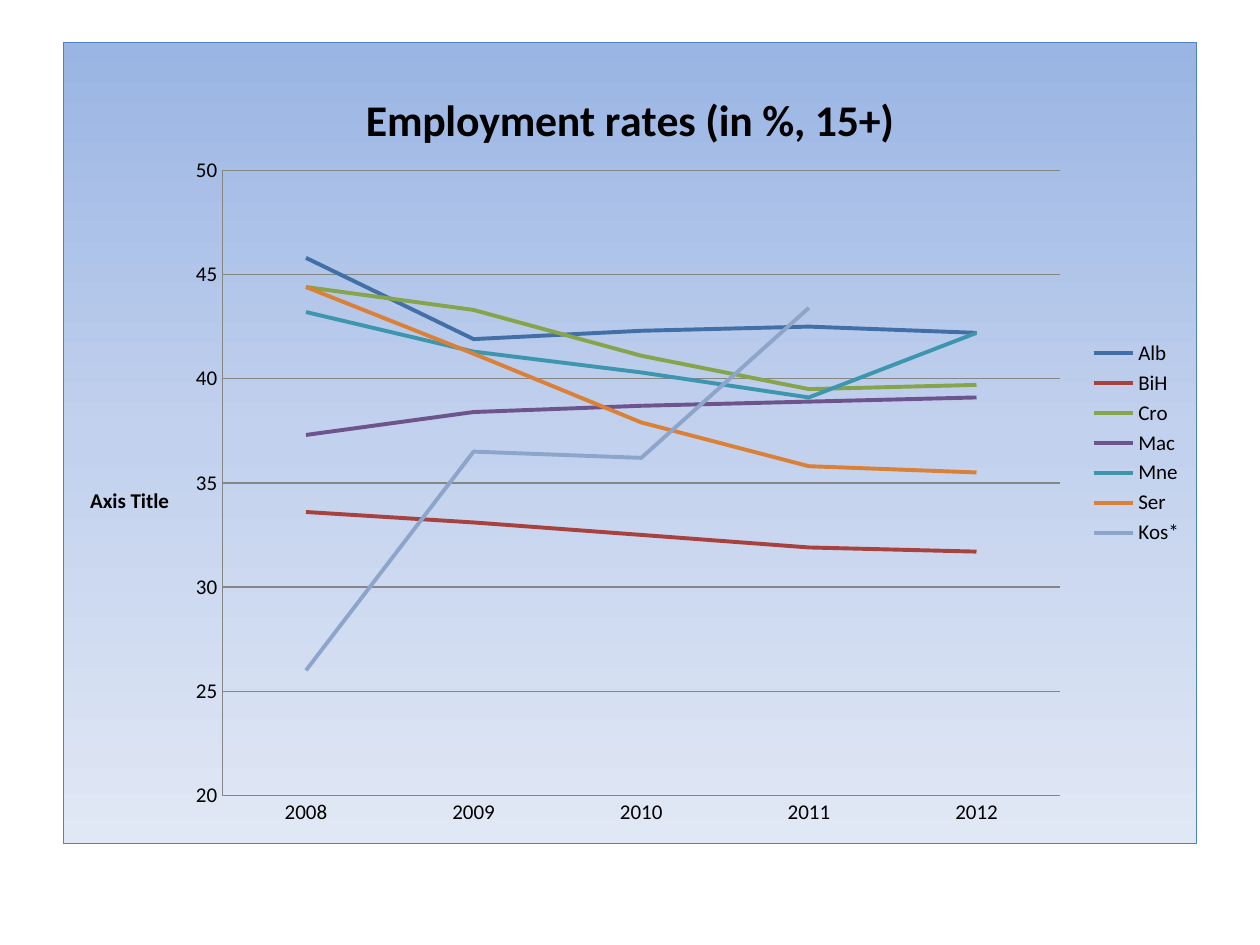
from lxml import etree
from pptx import Presentation
from pptx.chart.data import CategoryChartData
from pptx.dml.color import RGBColor
from pptx.enum.chart import XL_CHART_TYPE as ChartType, XL_LEGEND_POSITION as LegendPos, XL_TICK_MARK as Tick
from pptx.oxml import parse_xml
from pptx.oxml.ns import nsdecls, qn
from pptx.util import Inches, Pt

YEARS = ["2008", "2009", "2010", "2011", "2012"]
RATES = [
    ("Alb", "416FA6", [45.8, 41.9, 42.3, 42.5, 42.2]),
    ("BiH", "A8423F", [33.6, 33.1, 32.5, 31.9, 31.7]),
    ("Cro", "86A44A", [44.4, 43.3, 41.1, 39.5, 39.7]),
    ("Mac", "6E548D", [37.3, 38.4, 38.7, 38.9, 39.1]),
    ("Mne", "3D96AE", [43.2, 41.3, 40.3, 39.1, 42.2]),
    ("Ser", "DA8137", [44.4, 41.2, 37.9, 35.8, 35.5]),
    ("Kos*", "8EA5CB", [26, 36.5, 36.2, 43.4, None]),
]
GRADIENT = [(0, "9AB5E4"), (50, "C2D1ED"), (100, "E1E8F5")]


def rgb(color):
    """Return the colour for a hex string."""
    return RGBColor.from_string(color)


def set_font(font, size=12, bold=False, color="000000", name="Calibri"):
    """Format a font."""
    font.size, font.bold, font.name = Pt(size), bold, name
    font.color.rgb = rgb(color)


def set_text(tf, text, **fmt):
    """Write one formatted run into a text frame."""
    r = tf.paragraphs[0].add_run()
    r.text = text
    set_font(r.font, **fmt)


def set_line(line, color, width=0.75):
    """Format an outline or a series line."""
    line.color.rgb = rgb(color)
    line.width = Pt(width)


def set_layout(element, inner=False, **fractions):
    """Place a chart part by fractions of the chart's size."""
    for old in element.findall(qn("c:layout")):
        element.remove(old)
    layout = etree.Element(qn("c:layout"))
    manual = etree.SubElement(layout, qn("c:manualLayout"))
    if inner:
        etree.SubElement(manual, qn("c:layoutTarget"), val="inner")
    for key in "xy":
        etree.SubElement(manual, qn(f"c:{key}Mode"), val="edge")
    for key, value in fractions.items():
        etree.SubElement(manual, qn(f"c:{key}"), val=str(value))
    tx = element.find(qn("c:tx"))
    element.insert(0 if tx is None else element.index(tx) + 1, layout)


def set_background(chart, stops, border):
    """Give the chart area a vertical gradient and a border."""
    gs = "".join(f'<a:gs pos="{pos * 1000}"><a:srgbClr val="{color}"/></a:gs>' for pos, color in stops)
    sp_pr = parse_xml(
        f'<c:spPr {nsdecls("c", "a")}><a:gradFill><a:gsLst>{gs}</a:gsLst>'
        f'<a:lin ang="5400000" scaled="0"/></a:gradFill><a:ln w="{Pt(0.75)}">'
        f'<a:solidFill><a:srgbClr val="{border}"/></a:solidFill></a:ln></c:spPr>'
    )
    chart.element.find(qn("c:chart")).addnext(sp_pr)


def format_axes(chart):
    """Set scale, lines and title of the axes."""
    for axis in (chart.category_axis, chart.value_axis):
        axis.major_tick_mark = axis.minor_tick_mark = Tick.NONE
        set_font(axis.tick_labels.font)
        set_line(axis.format.line, "868686")
    axis = chart.value_axis
    axis.minimum_scale, axis.maximum_scale, axis.major_unit = 20, 50, 5
    axis.has_major_gridlines = True
    set_line(axis.major_gridlines.format.line, "868686")
    axis.tick_labels.number_format = "#,##0"
    axis.tick_labels.number_format_is_linked = False
    title = axis.axis_title
    set_text(title.text_frame, "Axis Title", bold=True)
    body = title.element.find(".//" + qn("a:bodyPr"))
    body.set("rot", "0")
    body.set("vert", "horz")
    set_layout(title.element, x=0.02, y=0.55)


def add_rates_chart(slide):
    """Add the line chart of employment rates."""
    data = CategoryChartData(number_format="General")
    data.categories = YEARS
    for name, _, values in RATES:
        data.add_series(name, values)
    chart = slide.shapes.add_chart(
        ChartType.LINE, Inches(0.5), Inches(0.33), Inches(9), Inches(6.37), data
    ).chart
    set_font(chart.font)
    set_background(chart, GRADIENT, "4F81BD")
    chart.has_title = True
    set_text(chart.chart_title.text_frame, "Employment rates (in %, 15+)", size=25, bold=True)
    set_layout(chart.chart_title.element, x=0.26, y=0.05)
    format_axes(chart)
    for series, (_, color, _) in zip(chart.plots[0].series, RATES):
        series.smooth = False
        set_line(series.format.line, color, 2.25)
    chart.plots[0].vary_by_categories = False
    chart.has_legend = True
    chart.legend.position = LegendPos.RIGHT
    chart.legend.include_in_layout = False
    set_font(chart.legend.font)
    set_layout(chart.element.find(".//" + qn("c:plotArea")), inner=True, x=0.14, y=0.16, w=0.74, h=0.78)


def main():
    """Build the slide and save it."""
    prs = Presentation()
    prs.slide_width, prs.slide_height = Inches(10), Inches(7.5)
    s = prs.slides.add_slide(prs.slide_layouts[6])
    add_rates_chart(s)
    prs.save("out.pptx")


if __name__ == "__main__":
    main()
